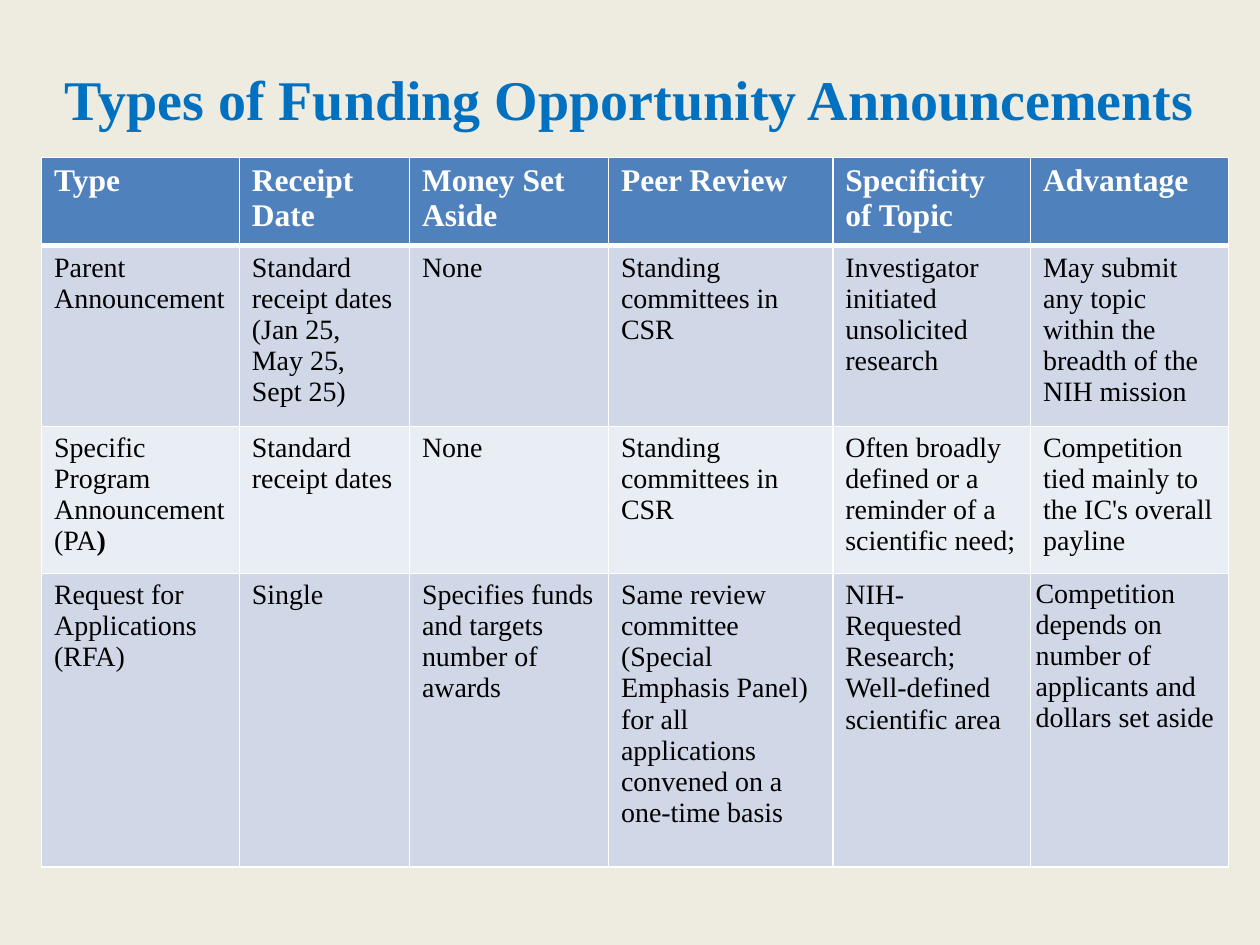
from lxml import etree
from pptx import Presentation
from pptx.dml.color import RGBColor
from pptx.enum.text import MSO_ANCHOR, PP_ALIGN
from pptx.oxml.ns import qn
from pptx.util import Inches, Pt

CENTER = PP_ALIGN.CENTER
MIDDLE = MSO_ANCHOR.MIDDLE
FONT = "Times New Roman"
CREAM = RGBColor(0xEE, 0xEC, 0xE1)
TITLE_BLUE = RGBColor(0x00, 0x70, 0xC0)
HEADER_BLUE = RGBColor(0x4F, 0x81, 0xBD)
BAND_DARK = RGBColor(0xD0, 0xD8, 0xE8)
BAND_LIGHT = RGBColor(0xE9, 0xED, 0xF4)
WHITE = RGBColor(0xFF, 0xFF, 0xFF)
BLACK = RGBColor(0x00, 0x00, 0x00)

COLUMNS = [1.57, 1.35, 1.58, 1.78, 1.57, 1.57]
ROWS = [0.67, 1.37, 1.15, 2.33]
ANNOUNCEMENTS = [
    ["Type", "Receipt Date", "Money Set Aside", "Peer Review",
     "Specificity of Topic", "Advantage"],
    ["Parent Announcement",
     "Standard receipt dates\n(Jan 25, May 25, Sept 25)",
     "None",
     "Standing committees in CSR",
     "Investigator initiated unsolicited research",
     "May submit any topic within the breadth of the NIH mission"],
    ["Specific Program Announcement (PA",
     "Standard receipt dates",
     "None",
     "Standing committees in CSR",
     "Often broadly defined or a reminder of a scientific need;",
     "Competition tied mainly to the IC's overall payline"],
    ["Request for Applications (RFA)",
     "Single",
     "Specifies funds and targets number of awards",
     "Same review committee (Special Emphasis Panel) for all applications "
     "convened on a one-time basis",
     "NIH-Requested Research; Well-defined scientific area",
     "Competition depends on number of applicants and dollars set aside"],
]


def add_run(paragraph, text, size, color, bold):
    run = paragraph.add_run()
    run.text = text
    run.font.name = FONT
    run.font.size = Pt(size)
    run.font.bold = bold
    run.font.color.rgb = color


def add_borders(cell, widths):
    properties = cell._tc.get_or_add_tcPr()
    for side, width in widths.items():
        line = etree.SubElement(properties, qn(f"a:ln{side}"), w=str(Pt(width)))
        fill = etree.SubElement(line, qn("a:solidFill"))
        etree.SubElement(fill, qn("a:srgbClr"), val=str(WHITE))


prs = Presentation()
prs.slide_width = Inches(10)
prs.slide_height = Inches(7.5)
slide = prs.slides.add_slide(prs.slide_layouts[6])
slide.background.fill.solid()
slide.background.fill.fore_color.rgb = CREAM

title = slide.shapes.add_textbox(
    Inches(0.25), Inches(0.3), Inches(9.5), Inches(0.95)).text_frame
title.word_wrap = True
title.vertical_anchor = MIDDLE
title.paragraphs[0].alignment = CENTER
add_run(title.paragraphs[0], "Types of Funding Opportunity Announcements",
        32, TITLE_BLUE, True)

table = slide.shapes.add_table(
    len(ROWS), len(COLUMNS), Inches(0.33), Inches(1.25),
    Inches(sum(COLUMNS)), Inches(sum(ROWS))).table
for column, width in zip(table.columns, COLUMNS):
    column.width = Inches(width)
for row, height in zip(table.rows, ROWS):
    row.height = Inches(height)

for r, announcement in enumerate(ANNOUNCEMENTS):
    header = r == 0
    band = HEADER_BLUE if header else BAND_DARK if r % 2 else BAND_LIGHT
    size, color = (18, WHITE) if header else (16, BLACK)
    for c, text in enumerate(announcement):
        cell = table.cell(r, c)
        add_borders(cell, {"L": 1, "R": 1, "T": 3 if r == 1 else 1,
                           "B": 3 if header else 1})
        cell.fill.solid()
        cell.fill.fore_color.rgb = band
        for i, line in enumerate(text.split("\n")):
            frame = cell.text_frame
            paragraph = frame.add_paragraph() if i else frame.paragraphs[0]
            add_run(paragraph, line, size, color, header)

program_type = table.cell(2, 0).text_frame.paragraphs[0]
add_run(program_type, ")", 16, BLACK, True)

rfa_advantage = table.cell(3, 5)
rfa_advantage.margin_left = rfa_advantage.margin_right = Inches(0.04)
rfa_advantage.margin_top = rfa_advantage.margin_bottom = Inches(0.04)

prs.save("out.pptx")
